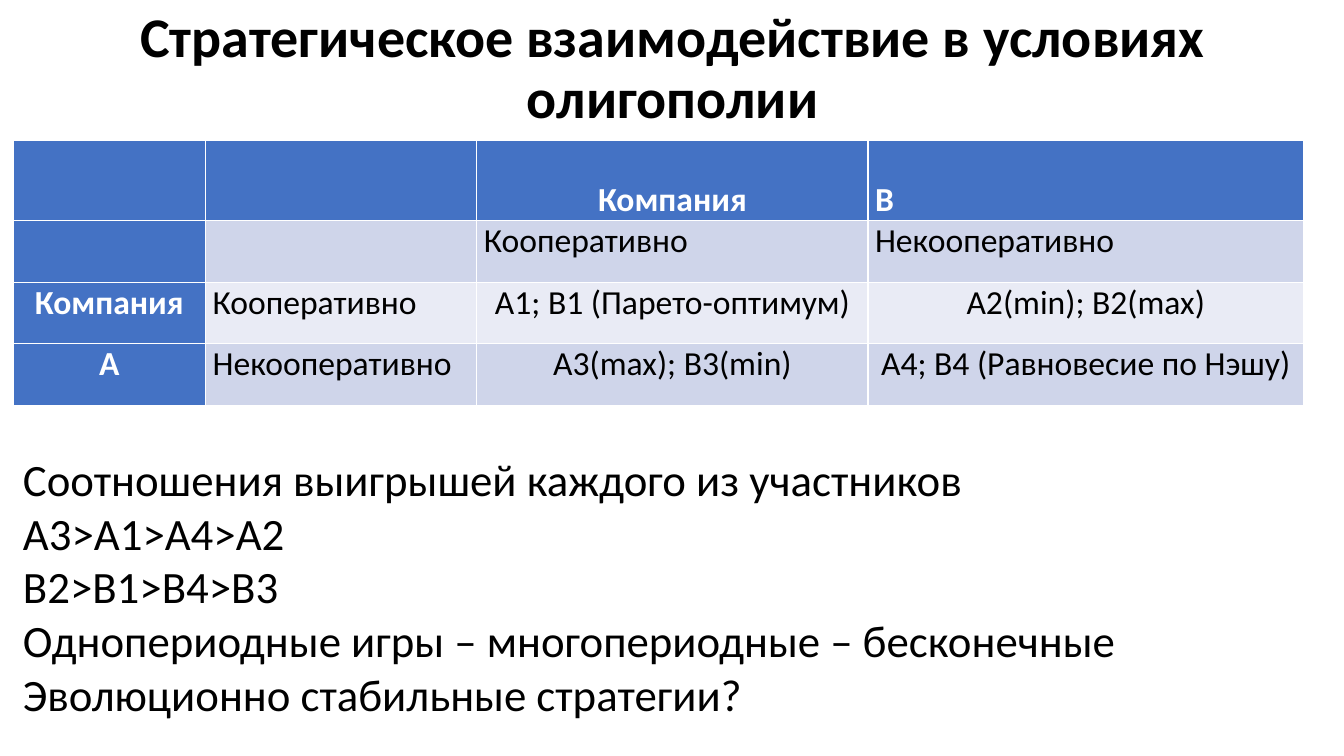
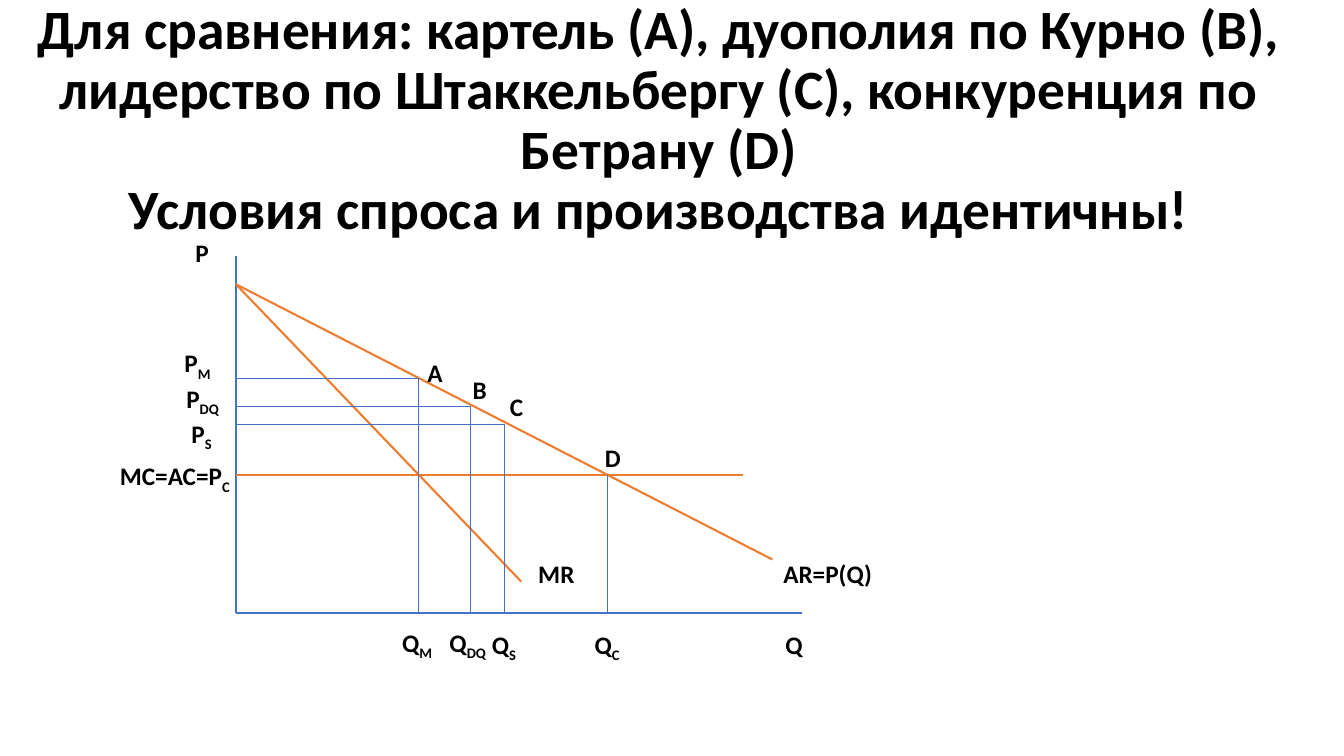
"""Build two slides on strategic behaviour in an oligopoly."""
from dataclasses import dataclass

import lxml.etree
import pptx
import pptx.dml.color
import pptx.enum.shapes
import pptx.enum.text
import pptx.oxml.ns
import pptx.util

PX = 9144
ALIGN = pptx.enum.text.PP_ALIGN
ANCHOR = pptx.enum.text.MSO_ANCHOR


@dataclass(frozen=True)
class Theme:
    """Colours, type and line sizes of the deck."""
    font: str = "Calibri"
    ink: str = "000000"
    white: str = "FFFFFF"
    blue: str = "4472C4"
    orange: str = "ED7D31"
    bands: tuple = ("CFD5EA", "E9EBF5")
    title: float = 40
    long: float = 39.6
    body: float = 32
    cell: float = 24
    label: float = 18
    bold: float = 1.5
    thin: float = 0.5


THEME = Theme()

GRID = (
    ("", "", "Компания", "B"),
    ("", "", "Кооперативно", "Некооперативно"),
    ("Компания", "Кооперативно", "A1; B1 (Парето-оптимум)", "A2(min); B2(max)"),
    ("А", "Некооперативно", "A3(max); B3(min)", "A4; B4 (Равновесие по Нэшу)"),
)
COLS = (191, 269, 388, 432)
ROWS = (80, 61, 61, 61)
NOTES = (
    "Соотношения выигрышей каждого из участников",
    "A3>A1>A4>A2",
    "B2>B1>B4>B3",
    "Однопериодные игры – многопериодные – бесконечные",
    "Эволюционно стабильные стратегии?",
)

LEFT, BASE, TOP, COST = 234, 608, 282, 471
POINTS = ((415, 375), (467, 403), (500, 421), (602, COST))
LABELS = (
    ("P", "", 184, 231, 34),
    ("P", "M", 173, 340, 48),
    ("P", "DQ", 175, 375, 56),
    ("P", "S", 180, 410, 42),
    ("MC=AC=P", "C", 109, 452, 132),
    ("Q", "M", 389, 617, 52),
    ("Q", "DQ", 436, 617, 60),
    ("Q", "S", 478, 619, 45),
    ("Q", "C", 580, 619, 46),
    ("Q", "", 769, 619, 38),
    ("MR", "", 524, 549, 56),
    ("AR=P(Q)", "", 767, 549, 109),
    ("А", "", 414, 350, 35),
    ("B", "", 459, 366, 34),
    ("C", "", 496, 383, 34),
    ("D", "", 590, 434, 36),
)


def px(*nums):
    """Turn px into EMU."""
    return [pptx.util.Emu(num * PX) for num in nums]


def rgb(code):
    """Return a colour from its hex code."""
    return pptx.dml.color.RGBColor.from_string(code)


def style(frame, size, color=THEME.ink, bold=False, align=ALIGN.LEFT, space=None):
    """Format every run and paragraph of a text frame."""
    for para in frame.paragraphs:
        para.alignment = align
        para.line_spacing = space
        for run in para.runs:
            run.font.name = THEME.font
            run.font.size = pptx.util.Pt(size)
            run.font.bold = bold
            run.font.color.rgb = rgb(color)


def add_text(slide, box, text, wrap=True):
    """Add a text box and return its frame."""
    frame = slide.shapes.add_textbox(*px(*box)).text_frame
    frame.word_wrap = wrap
    frame.text = text
    return frame


def add_title(slide, box, text, size):
    """Add a bold centred title."""
    frame = add_text(slide, box, text)
    frame.vertical_anchor = ANCHOR.MIDDLE
    style(frame, size, bold=True, align=ALIGN.CENTER, space=0.9)


def add_label(slide, text, sub, left, top, width):
    """Add a bold chart label with an optional subscript."""
    frame = add_text(slide, (left, top, width, 40), text, wrap=False)
    if sub:
        run = frame.paragraphs[0].add_run()
        run.text = sub
        run.font._element.set("baseline", "-25000")
    style(frame, THEME.label, bold=True)


def add_line(slide, ends, color, width):
    """Add a straight line without a shadow."""
    kind = pptx.enum.shapes.MSO_CONNECTOR.STRAIGHT
    line = slide.shapes.add_connector(kind, *px(*ends))
    line.line.color.rgb = rgb(color)
    line.line.width = pptx.util.Pt(width)
    lxml.etree.SubElement(line._element.spPr, pptx.oxml.ns.qn("a:effectLst"))


def fill_cell(cell, row, col, text):
    """Fill and format one cell by its place in the grid."""
    head = row == 0 or col == 0
    mid = col == 0 or (row, col) == (0, 2) or (row > 1 and col > 1)
    cell.fill.solid()
    cell.fill.fore_color.rgb = rgb(THEME.blue if head else THEME.bands[(row + 1) % 2])
    cell.margin_left, cell.margin_right = px(7, 7)
    cell.margin_top = cell.margin_bottom = 0
    cell.vertical_anchor = ANCHOR.BOTTOM if row == 0 else ANCHOR.TOP
    cell.text_frame.text = text
    style(cell.text_frame, THEME.cell, THEME.white if head else THEME.ink,
          head, ALIGN.CENTER if mid else ALIGN.JUSTIFY)


def add_grid(slide, left, top):
    """Add the payoff table."""
    size = px(left, top, sum(COLS), sum(ROWS))
    table = slide.shapes.add_table(len(ROWS), len(COLS), *size).table
    for col, width in zip(table.columns, px(*COLS)):
        col.width = width
    for row, height in zip(table.rows, px(*ROWS)):
        row.height = height
    for row, texts in enumerate(GRID):
        for col, text in enumerate(texts):
            fill_cell(table.cell(row, col), row, col, text)


def add_graph(slide):
    """Draw the axes, curves, guides and labels."""
    for ends in ((LEFT, 254, LEFT, BASE), (LEFT, BASE, 795, BASE)):
        add_line(slide, ends, THEME.blue, THEME.bold)
    for ends in ((LEFT, COST, 737, COST), (LEFT, TOP, 766, 555), (LEFT, TOP, 517, 577)):
        add_line(slide, ends, THEME.orange, THEME.bold)
    for x, y in POINTS:
        add_line(slide, (x, y, x, BASE), THEME.blue, THEME.thin)
        if y != COST:
            add_line(slide, (x, y, LEFT, y), THEME.blue, THEME.thin)
    for label in LABELS:
        add_label(slide, *label)


def main():
    """Build and save the deck."""
    deck = pptx.Presentation()
    deck.slide_width, deck.slide_height = px(1333, 750)
    game, graph = [deck.slides.add_slide(deck.slide_layouts[6]) for _ in range(2)]
    add_title(game, (92, -3, 1150, 145),
              "Стратегическое взаимодействие в условиях олигополии", THEME.title)
    add_grid(game, 13, 139)
    notes = add_text(game, (13, 443, 1320, 279), "\n".join(NOTES))
    style(notes, THEME.body, align=ALIGN.JUSTIFY)
    add_title(graph, (0, 48, 1307, 145),
              "Для сравнения: картель (А), дуополия по Курно (B), лидерство по "
              "Штаккельбергу (С), конкуренция по Бетрану (D)\n"
              "Условия спроса и производства идентичны!", THEME.long)
    add_graph(graph)
    deck.save("out.pptx")


if __name__ == "__main__":
    main()
